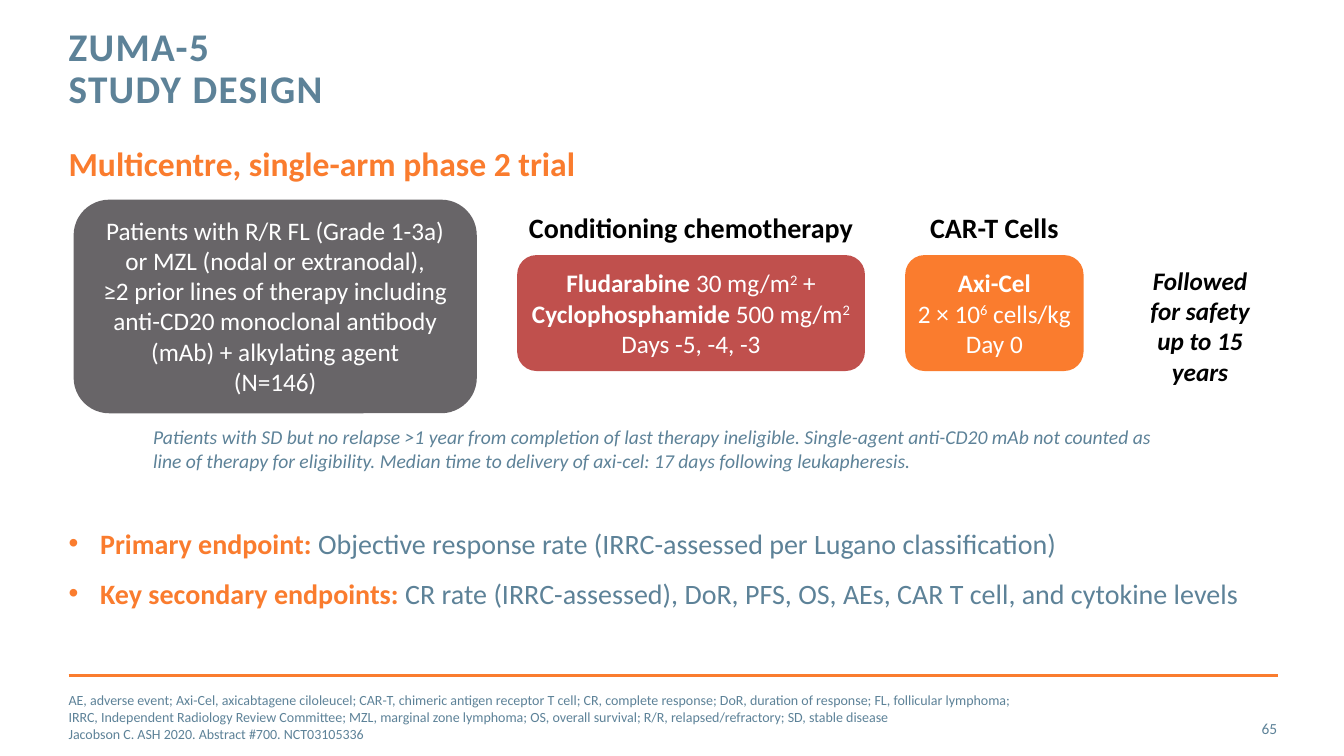
import pptx
import pptx.dml.color
import pptx.enum.shapes
import pptx.enum.text
import pptx.oxml
import pptx.oxml.ns
import pptx.util
from dataclasses import dataclass

Pt = pptx.util.Pt
Align = pptx.enum.text.PP_ALIGN
Anchor = pptx.enum.text.MSO_ANCHOR


@dataclass(frozen=True)
class Theme:
    font: str = "Calibri"
    slate: str = "5D8298"
    orange: str = "FA7C2E"
    grey: str = "686568"
    red: str = "C0504D"
    white: str = "FFFFFF"
    black: str = "000000"
    title: float = 28
    subtitle: float = 24
    body: float = 20
    card: float = 18
    note: float = 14
    page_number: float = 11
    footer: float = 10


THEME = Theme()


@dataclass(frozen=True)
class Frame:
    left: float
    top: float
    width: float
    height: float

    def lengths(self) -> list[int]:
        return [Pt(v) for v in (self.left, self.top, self.width, self.height)]


@dataclass(frozen=True)
class Span:
    """A piece of text; a newline inside it is a line break."""
    text: str
    bold: bool = False
    italic: bool = False
    raised: bool = False
    color: str | None = None
    spacing: float = 0


Line = list[Span]


@dataclass(frozen=True)
class Block:
    """A text box, or a rounded card when it has a fill."""
    frame: Frame
    lines: list[Line]
    size: float
    color: str
    fill: str | None = None
    align: Align = Align.LEFT
    anchor: Anchor = Anchor.TOP
    insets: tuple[float, float, float, float] = (0, 0, 0, 0)
    line_spacing: float | None = None
    gap: float = 0
    bullet: str | None = None


@dataclass(frozen=True)
class Step:
    """A treatment step: heading above a coloured card."""
    left: float
    width: float
    heading: str
    fill: str
    lines: list[Line]


def rgb(color: str) -> pptx.dml.color.RGBColor:
    return pptx.dml.color.RGBColor.from_string(color)


def add_bullet(para, char: str, color: str, indent: float) -> None:
    props = para._p.get_or_add_pPr()
    props.set("marL", str(Pt(indent)))
    props.set("indent", str(-Pt(indent)))
    space = pptx.oxml.ns.nsdecls("a")
    for xml in (
        f'<a:buClr {space}><a:srgbClr val="{color}"/></a:buClr>',
        f'<a:buFont {space} typeface="Arial"/>',
        f'<a:buChar {space} char="{char}"/>',
    ):
        props.append(pptx.oxml.parse_xml(xml))


def add_span(para, span: Span, block: Block) -> None:
    for index, text in enumerate(span.text.split("\n")):
        if index:
            para.add_line_break()
        if not text:
            continue
        run = para.add_run()
        run.text = text
        font = run.font
        font.name, font.size = THEME.font, Pt(block.size)
        font.bold, font.italic = span.bold, span.italic
        font.color.rgb = rgb(span.color or block.color)
        if span.raised:
            run._r.get_or_add_rPr().set("baseline", "30000")
        if span.spacing:
            run._r.get_or_add_rPr().set("spc", str(int(span.spacing * 100)))


def add_block(page, block: Block) -> None:
    if block.fill:
        box = page.shapes.add_shape(
            pptx.enum.shapes.MSO_SHAPE.ROUNDED_RECTANGLE, *block.frame.lengths())
        box.shadow.inherit = False
        box.fill.solid()
        box.fill.fore_color.rgb = rgb(block.fill)
        box.line.fill.background()
    else:
        box = page.shapes.add_textbox(*block.frame.lengths())
    frame = box.text_frame
    frame.word_wrap = True
    frame.vertical_anchor = block.anchor
    frame.margin_left, frame.margin_top, frame.margin_right, frame.margin_bottom = (
        Pt(inset) for inset in block.insets)
    for index, line in enumerate(block.lines):
        para = frame.add_paragraph() if index else frame.paragraphs[0]
        if block.bullet:
            add_bullet(para, block.bullet, THEME.orange, 22.5)
        para.alignment = block.align
        if block.line_spacing:
            para.line_spacing = Pt(block.line_spacing)
        if index and block.gap:
            para.space_before = Pt(block.gap)
        for span in line:
            add_span(para, span, block)


def add_step(page, step: Step) -> None:
    add_block(page, Block(
        Frame(step.left, 147, step.width, 31.7), [[Span(step.heading, bold=True)]],
        THEME.body, THEME.black, align=Align.CENTER, insets=(3.6, 3.6, 3.6, 3.6)))
    add_block(page, Block(
        Frame(step.left, 182.2, step.width, 82.8), step.lines, THEME.card, THEME.white,
        fill=step.fill, align=Align.CENTER, anchor=Anchor.MIDDLE,
        insets=(2.88, 3.6, 2.88, 3.6)))


def add_rule(page, left: float, right: float, top: float) -> None:
    rule = page.shapes.add_connector(
        pptx.enum.shapes.MSO_CONNECTOR.STRAIGHT, Pt(left), Pt(top), Pt(right), Pt(top))
    rule.line.color.rgb = rgb(THEME.orange)
    rule.line.width = Pt(2)
    rule._element.spPr.append(
        pptx.oxml.parse_xml(f'<a:effectLst {pptx.oxml.ns.nsdecls("a")}/>'))


MARGIN = 49
CONTENT = 863.3
NARROW = 688.3
PADDING = (7.2, 3.6, 7.2, 3.6)

BLOCKS = [
    # Title and subtitle
    Block(Frame(MARGIN, 19.4, NARROW, 63.4),
          [[Span("ZUMA-5\nSTUDY DESIGN", bold=True, spacing=1)]],
          THEME.title, THEME.slate, line_spacing=30),
    Block(Frame(MARGIN, 102.2, CONTENT, 34),
          [[Span("Multicentre, single-arm phase 2 trial", bold=True)]],
          THEME.subtitle, THEME.orange),
    # Patients
    Block(Frame(52.6, 142.6, 288, 152.6),
          [[Span("Patients with R/R FL (Grade 1-3a)\nor MZL (nodal or extranodal),\n"
                 "≥2 prior lines of therapy including anti-CD20 monoclonal antibody "
                 "(mAb) + alkylating agent")],
           [Span("(N=146)")]],
          THEME.card, THEME.white, fill=THEME.grey, align=Align.CENTER, insets=PADDING),
    # Follow-up
    Block(Frame(805.7, 185.8, 103, 94.3),
          [[Span("Followed for safety up to 15 years", bold=True, italic=True)]],
          THEME.card, THEME.black, align=Align.CENTER, insets=PADDING),
    # Eligibility note
    Block(Frame(109.4, 300.2, 741.6, 41),
          [[Span("Patients with SD but no relapse >1 year from completion of last therapy "
                 "ineligible. Single-agent anti-CD20 mAb not counted as line of therapy for "
                 "eligibility. Median time to delivery of axi-cel: 17 days following "
                 "leukapheresis.", italic=True)]],
          THEME.note, THEME.slate, insets=(0, 3.6, 7.2, 3.6)),
    # Endpoints
    Block(Frame(MARGIN, 375.8, CONTENT, 80.6),
          [[Span("Primary endpoint: ", bold=True, color=THEME.orange),
            Span("Objective response rate (IRRC-assessed per Lugano classification)")],
           [Span("Key secondary endpoints: ", bold=True, color=THEME.orange),
            Span("CR rate (IRRC-assessed), DoR, PFS, OS, AEs, CAR T cell, "
                 "and cytokine levels")]],
          THEME.body, THEME.slate, gap=12, bullet="•"),
    # Abbreviations and page number
    Block(Frame(MARGIN, 497.5, NARROW, 28.8),
          [[Span("AE, adverse event; Axi-Cel, axicabtagene ciloleucel; CAR-T, chimeric antigen "
                 "receptor T cell; CR, complete response; DoR, duration of response; FL, "
                 "follicular lymphoma; IRRC, Independent Radiology Review Committee; MZL, "
                 "marginal zone lymphoma; OS, overall survival; R/R, relapsed/refractory; "
                 "SD, stable disease\nJacobson C. ASH 2020. Abstract #700. NCT03105336")]],
          THEME.footer, THEME.slate, anchor=Anchor.MIDDLE),
    Block(Frame(850.3, 506.2, 62, 28.8), [[Span("65")]], THEME.page_number, THEME.slate,
          align=Align.RIGHT, anchor=Anchor.MIDDLE),
]

STEPS = [
    Step(369.4, 248.4, "Conditioning chemotherapy", THEME.red, [
        [Span("Fludarabine ", bold=True), Span("30 mg/m"), Span("2", raised=True),
         Span(" +\n"), Span("Cyclophosphamide ", bold=True), Span("500 mg/m"),
         Span("2", raised=True)],
        [Span("Days -5, -4, -3")]]),
    Step(646.6, 127.4, "CAR-T Cells", THEME.orange, [
        [Span("Axi-Cel", bold=True)],
        [Span("2 × 10"), Span("6", raised=True), Span(" cells/kg")],
        [Span("Day 0")]]),
]


def main() -> None:
    deck = pptx.Presentation()
    deck.slide_width, deck.slide_height = Pt(960), Pt(540)
    page = deck.slides.add_slide(deck.slide_layouts[6])
    add_rule(page, MARGIN, 913, 482.4)
    for block in BLOCKS:
        add_block(page, block)
    for step in STEPS:
        add_step(page, step)
    deck.save("out.pptx")


if __name__ == "__main__":
    main()
